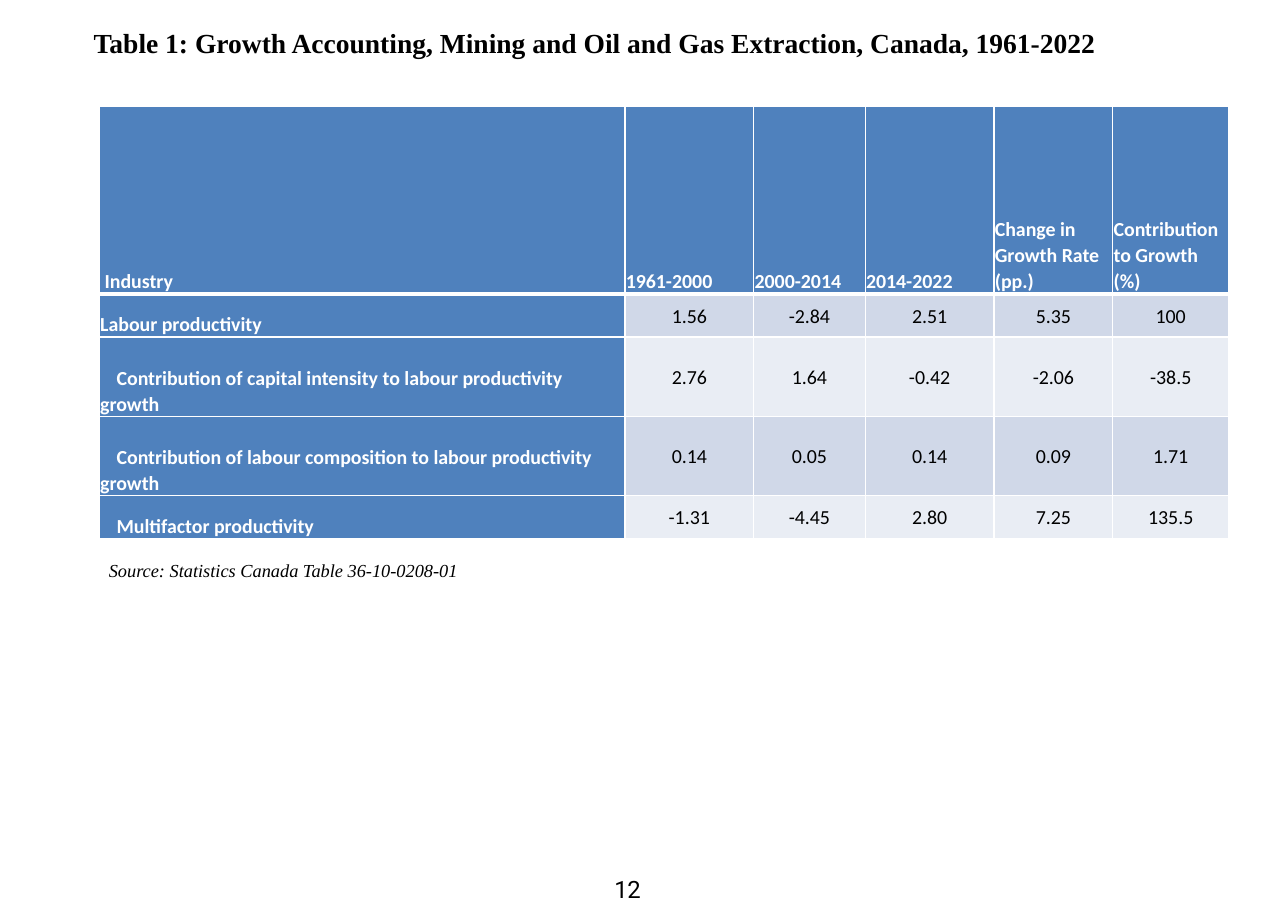
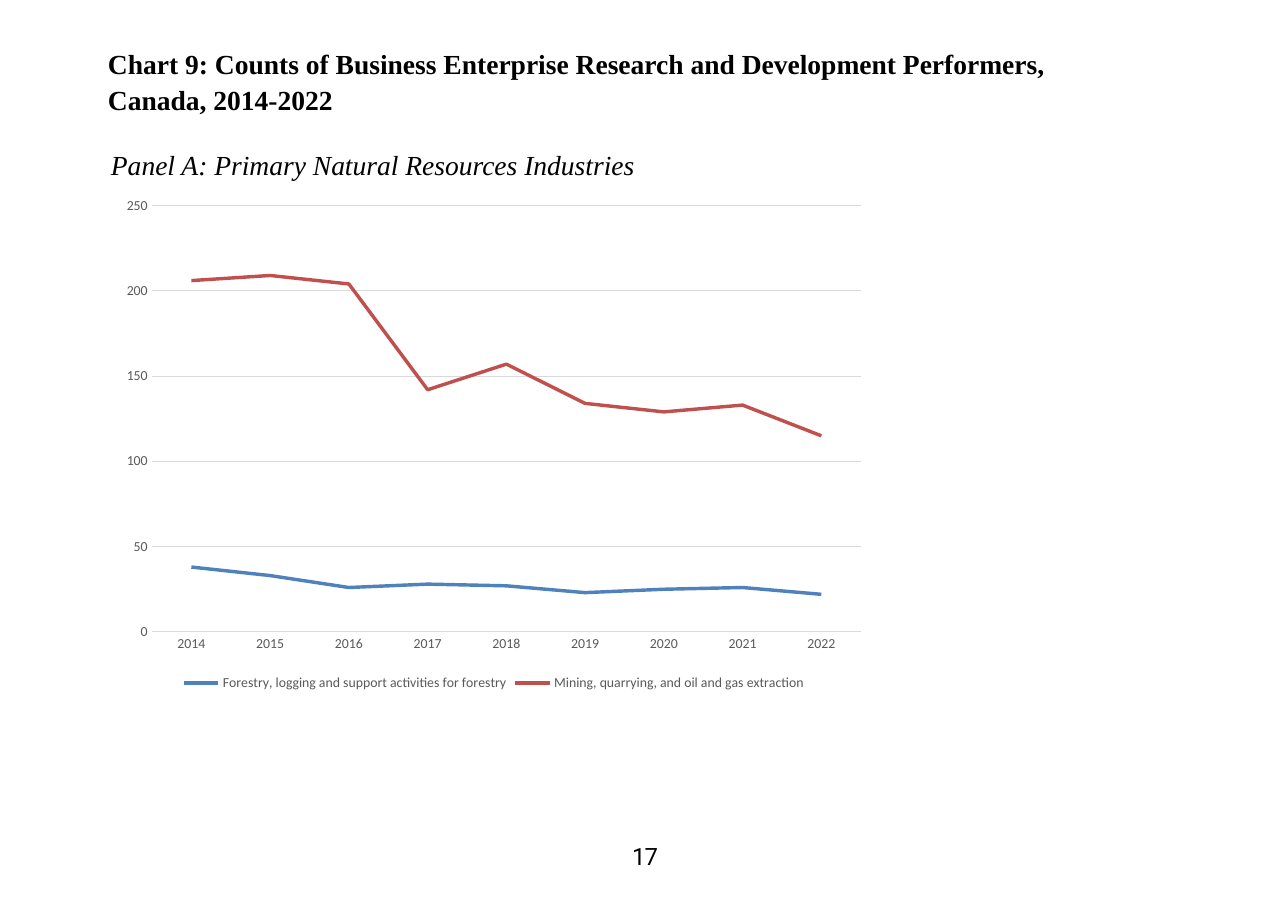
from dataclasses import dataclass

from lxml.etree import SubElement
from pptx import Presentation
from pptx.chart.data import CategoryChartData
from pptx.dml.color import RGBColor
from pptx.enum.chart import XL_CHART_TYPE, XL_LEGEND_POSITION, XL_MARKER_STYLE, XL_TICK_MARK
from pptx.enum.text import MSO_ANCHOR, MSO_AUTO_SIZE, PP_ALIGN
from pptx.oxml.ns import qn
from pptx.util import Cm, Pt


@dataclass(frozen=True)
class Theme:
    serif: str = "Times New Roman"
    sans: str = "Calibri"
    number_font: str = "Roboto"
    black: str = "000000"
    white: str = "FFFFFF"
    blue: str = "4F81BD"
    red: str = "C0504D"
    bands: tuple = ("D0D8E8", "E9EDF4")
    axis_text: str = "595959"
    grid: str = "D9D9D9"
    title_size: float = 18
    table_size: float = 13
    source_size: float = 12
    number_size: float = 15.6
    chart_size: float = 10
    axis_size: float = 9
    line_spacing: float = 1.07
    space_after: float = 8


THEME = Theme()

TABLE_HEADER = ["\u00a0Industry", "1961-2000", "2000-2014", "2014-2022",
                "Change in Growth Rate (pp.)", "Contribution to Growth (%)"]
TABLE_ROWS = [
    ["Labour productivity", "1.56", "-2.84", "2.51", "5.35", "100"],
    ["Contribution of capital intensity to labour productivity growth",
     "2.76", "1.64", "-0.42", "-2.06", "-38.5"],
    ["Contribution of labour composition to labour productivity growth",
     "0.14", "0.05", "0.14", "0.09", "1.71"],
    ["Multifactor productivity", "-1.31", "-4.45", "2.80", "7.25", "135.5"],
]
COLUMN_WIDTHS = [12.12, 2.97, 2.57, 2.97, 2.74, 2.67]
ROW_HEIGHTS = [4.32, 0.99, 1.83, 1.83, 0.99]

YEARS = [str(year) for year in range(2014, 2023)]
PERFORMERS = [
    ("Forestry, logging and support activities for forestry",
     [38, 33, 26, 28, 27, 23, 25, 26, 22], THEME.blue),
    ("Mining, quarrying, and oil and gas extraction",
     [206, 209, 204, 142, 157, 134, 129, 133, 115], THEME.red),
]


def rgb(color):
    return RGBColor.from_string(color)


def style_font(font, name, size, color, bold=False, italic=False):
    font.name = name
    font.size = Pt(size)
    font.bold = bold
    font.italic = italic
    font.color.rgb = rgb(color)


def write_text(frame, text, *, font, size, color=THEME.black, bold=False, italic=False,
               align=PP_ALIGN.LEFT, line_spacing=THEME.line_spacing, before=0,
               after=THEME.space_after, margin=0, first_line=0, tracking=0):
    """Fill a text frame with one paragraph; margin and first_line are in centimetres."""
    paragraph = frame.paragraphs[0]
    paragraph.alignment = align
    paragraph.line_spacing = line_spacing
    paragraph.space_before = Pt(before)
    paragraph.space_after = Pt(after)
    properties = paragraph._p.get_or_add_pPr()
    properties.set("marL", str(Cm(margin)))
    properties.set("indent", str(Cm(first_line)))
    run = paragraph.add_run()
    run.text = text
    style_font(run.font, font, size, color, bold, italic)
    if tracking:
        run._r.get_or_add_rPr().set("spc", str(round(tracking * 100)))


def add_text(slide, box, text, insets=(0.25, 0.13, 0.25, 0.13), **text_format):
    """Add a text box; box is left, top, width, height in centimetres."""
    frame = slide.shapes.add_textbox(*map(Cm, box)).text_frame
    frame.word_wrap = True
    frame.auto_size = MSO_AUTO_SIZE.SHAPE_TO_FIT_TEXT
    (frame.margin_left, frame.margin_top,
     frame.margin_right, frame.margin_bottom) = map(Cm, insets)
    write_text(frame, text, **text_format)


def add_title(slide, box, text, **text_format):
    add_text(slide, box, text, font=THEME.serif, size=THEME.title_size, **text_format)


def add_page_number(slide, box, number, **text_format):
    add_text(slide, box, number, font=THEME.number_font, size=THEME.number_size,
             line_spacing=1, before=0.5, after=0, **text_format)


def set_borders(cell, widths):
    """Draw white borders; widths maps a side (L, R, T, B) to points."""
    properties = cell._tc.get_or_add_tcPr()
    for side, width in widths.items():
        line = SubElement(properties, qn(f"a:ln{side}"), w=str(Pt(width)))
        fill = SubElement(line, qn("a:solidFill"))
        SubElement(fill, qn("a:srgbClr"), val=THEME.white)


def format_cell(cell, text, row, column):
    set_borders(cell, {"L": 1, "R": 1, "T": 3 if row == 1 else 1, "B": 3 if row == 0 else 1})
    is_label = row == 0 or column == 0
    cell.fill.solid()
    cell.fill.fore_color.rgb = rgb(THEME.blue if is_label else THEME.bands[(row - 1) % 2])
    cell.margin_left = cell.margin_right = Cm(0.02)
    cell.margin_top = cell.margin_bottom = 0
    cell.vertical_anchor = MSO_ANCHOR.BOTTOM if is_label else MSO_ANCHOR.MIDDLE
    write_text(cell.text_frame, text, font=THEME.sans, size=THEME.table_size, bold=is_label,
               color=THEME.white if is_label else THEME.black,
               align=PP_ALIGN.LEFT if is_label else PP_ALIGN.CENTER,
               first_line=0.38 if column == 0 and row > 1 else 0)


def add_growth_table(slide, left, top):
    rows = [TABLE_HEADER, *TABLE_ROWS]
    table = slide.shapes.add_table(
        len(rows), len(TABLE_HEADER), Cm(left), Cm(top),
        Cm(sum(COLUMN_WIDTHS)), Cm(sum(ROW_HEIGHTS))).table
    table.horz_banding = False
    for column, width in zip(table.columns, COLUMN_WIDTHS):
        column.width = Cm(width)
    for row, height in zip(table.rows, ROW_HEIGHTS):
        row.height = Cm(height)
    for row_index, texts in enumerate(rows):
        for column_index, text in enumerate(texts):
            format_cell(table.cell(row_index, column_index), text, row_index, column_index)


def style_line(line, color, width):
    line.color.rgb = rgb(color)
    line.width = Pt(width)


def add_performers_chart(slide, box):
    data = CategoryChartData()
    data.categories = YEARS
    for name, values, _ in PERFORMERS:
        data.add_series(name, values)
    chart = slide.shapes.add_chart(XL_CHART_TYPE.LINE, *map(Cm, box), data).chart
    style_font(chart.font, THEME.sans, THEME.chart_size, THEME.black)
    chart.has_title = False
    chart.has_legend = True
    chart.legend.position = XL_LEGEND_POSITION.BOTTOM
    chart.legend.include_in_layout = False
    style_font(chart.legend.font, THEME.sans, THEME.axis_size, THEME.axis_text)

    for axis in (chart.category_axis, chart.value_axis):
        axis.major_tick_mark = axis.minor_tick_mark = XL_TICK_MARK.NONE
        style_font(axis.tick_labels.font, THEME.sans, THEME.axis_size, THEME.axis_text)
    style_line(chart.category_axis.format.line, THEME.grid, 0.75)
    value_axis = chart.value_axis
    value_axis.minimum_scale, value_axis.maximum_scale, value_axis.major_unit = 0, 250, 50
    value_axis.format.line.fill.background()
    value_axis.has_major_gridlines = True
    style_line(value_axis.major_gridlines.format.line, THEME.grid, 0.75)

    plot = chart.plots[0]
    plot.vary_by_categories = False
    for series, (_, _, color) in zip(plot.series, PERFORMERS):
        series.smooth = False
        series.marker.style = XL_MARKER_STYLE.NONE
        style_line(series.format.line, color, 2.25)


def add_slide(presentation):
    slide = presentation.slides.add_slide(presentation.slide_layouts[6])
    slide.background.fill.solid()
    slide.background.fill.fore_color.rgb = rgb(THEME.white)
    return slide


def build_table_slide(presentation):
    slide = add_slide(presentation)
    add_title(slide, (2.16, 0.51, 26.16, 0.81),
              "Table 1: Growth Accounting, Mining and Oil and Gas Extraction, Canada, 1961-2022",
              insets=(0, 0.03, 0, 0), bold=True)
    add_page_number(slide, (14.12, 20.14, 1.19, 0.69), "12",
                    insets=(0, 0.03, 0, 0), margin=0.05, tracking=-0.3)
    add_growth_table(slide, 2.29, 2.46)
    add_text(slide, (2.26, 12.73, 14.86, 0.79), "Source: Statistics Canada Table 36-10-0208-01",
             font=THEME.serif, size=THEME.source_size, italic=True)


def build_chart_slide(presentation):
    slide = add_slide(presentation)
    add_title(slide, (2.24, 0.91, 22.45, 3.18),
              "Chart 9: Counts of Business Enterprise Research and Development Performers, "
              "Canada, 2014-2022", bold=True, after=11.3)
    add_page_number(slide, (14.38, 19.41, 0.86, 0.66), "17",
                    insets=(0, 0, 0, 0), margin=0.2, tracking=-0.7)
    add_performers_chart(slide, (2.57, 4.32, 17.63, 11.71))
    add_title(slide, (2.31, 3.23, 14.86, 1.04),
              "Panel A: Primary Natural Resources Industries", italic=True)


def main():
    presentation = Presentation()
    presentation.slide_width = Cm(29.7)
    presentation.slide_height = Cm(20.98)
    build_table_slide(presentation)
    build_chart_slide(presentation)
    presentation.save("out.pptx")


if __name__ == "__main__":
    main()
